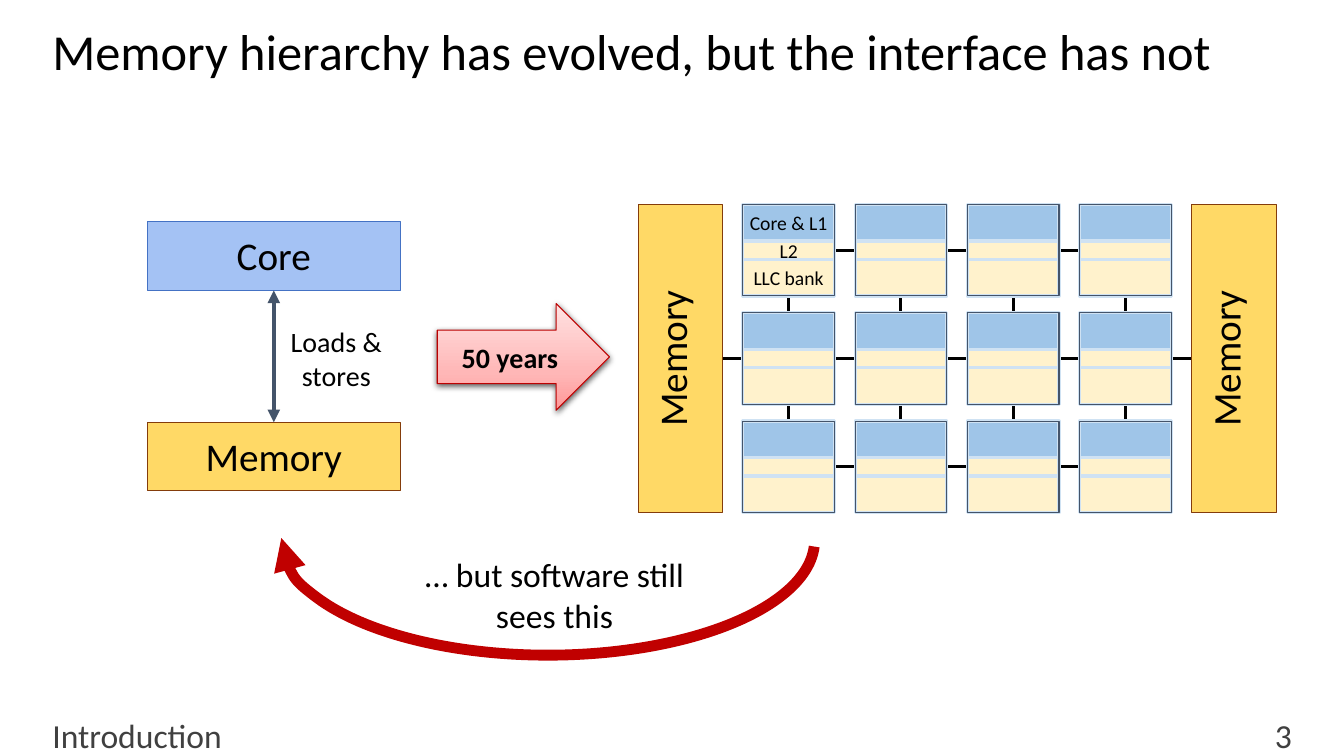
from dataclasses import dataclass

from lxml.etree import SubElement
from pptx import Presentation
from pptx.dml.color import RGBColor
from pptx.enum.shapes import MSO_CONNECTOR, MSO_SHAPE
from pptx.enum.text import MSO_ANCHOR, PP_ALIGN
from pptx.oxml.ns import qn
from pptx.util import Cm, Pt


@dataclass(frozen=True)
class Theme:
    font: str = "Calibri"
    ink: str = "000000"
    muted: str = "404040"
    slate: str = "44546A"
    core: str = "A4C2F4"
    core_edge: str = "4472C4"
    memory: str = "FFD966"
    memory_edge: str = "843C0B"
    core_band: str = "9FC5E8"
    cache_band: str = "FFF2CC"
    band_edge: str = "CFE2F3"
    arrow_edge: str = "BB0000"
    arrow_stops: tuple = ((0, "FF9797"), (35, "FFB7B7"), (100, "FFE2E2"))
    curve: str = "C00000"
    title_size: int = 36
    block_size: int = 28
    note_size: int = 24
    label_size: int = 20
    band_size: int = 14


@dataclass(frozen=True)
class Box:
    left: float
    top: float
    width: float
    height: float

    def inner(self, left, top, width, height):
        return Box(self.left + left, self.top + top, width, height)

    def lengths(self):
        return Cm(self.left), Cm(self.top), Cm(self.width), Cm(self.height)


THEME = Theme()


def write(shape, text, size, color=THEME.ink, align=PP_ALIGN.CENTER,
          anchor=MSO_ANCHOR.TOP, inset=(0.25, 0.25), bold=False):
    frame = shape.text_frame
    frame.word_wrap = True
    frame.vertical_anchor = anchor
    frame.margin_left = frame.margin_right = Cm(inset[0])
    frame.margin_top = frame.margin_bottom = Cm(inset[1])
    para = frame.paragraphs[0]
    para.alignment = align
    span = para.add_run()
    span.text = text
    span.font.name = THEME.font
    span.font.size = Pt(size)
    span.font.bold = bold
    span.font.color.rgb = RGBColor.from_string(color)
    return para


def add_label(page, box, text, size, **style):
    write(page.shapes.add_textbox(*box.lengths()), text, size, **style)


def add_block(page, box, fill, edge, weight=0.75, kind=MSO_SHAPE.RECTANGLE):
    shape = page.shapes.add_shape(kind, *box.lengths())
    shape.shadow.inherit = False
    if fill:
        shape.fill.solid()
        shape.fill.fore_color.rgb = RGBColor.from_string(fill)
    else:
        shape.fill.background()
    shape.line.color.rgb = RGBColor.from_string(edge)
    shape.line.width = Pt(weight)
    return shape


def add_line(page, start, end, color, weight):
    line = page.shapes.add_connector(
        MSO_CONNECTOR.STRAIGHT, *(Cm(value) for value in (*start, *end)))
    line.line.color.rgb = RGBColor.from_string(color)
    line.line.width = Pt(weight)
    SubElement(line.element.spPr, qn("a:effectLst"))
    return line


def add_arrowheads(shape, *ends):
    outline = shape.element.spPr.find(qn("a:ln"))
    for end in ends:
        SubElement(outline, qn(f"a:{end}"), type="triangle")


def add_title(page, box, text):
    title = page.shapes.title
    title.left, title.top, title.width, title.height = box.lengths()
    para = write(title, text, THEME.title_size, align=PP_ALIGN.LEFT, inset=(0.25, 0.13))
    para.line_spacing = 0.9


def add_footer(page, box, section, number):
    style = {"color": THEME.muted, "anchor": MSO_ANCHOR.MIDDLE, "inset": (0.25, 0.13)}
    add_label(page, box.inner(0, 0, 28.85, box.height), section,
              THEME.note_size, align=PP_ALIGN.LEFT, **style)
    add_label(page, box.inner(box.width - 2.08, 0, 2.08, box.height), number,
              THEME.note_size, align=PP_ALIGN.RIGHT, **style)


def add_simple_machine(page, box):
    height = 1.73
    core = add_block(page, box.inner(0, 0, box.width, height), THEME.core, THEME.core_edge)
    write(core, "Core", THEME.block_size)
    memory = add_block(page, box.inner(0, box.height - height, box.width, height),
                       THEME.memory, THEME.memory_edge)
    write(memory, "Memory", THEME.block_size)
    middle = box.left + box.width / 2
    link = add_line(page, (middle, box.top + box.height - height),
                    (middle, box.top + height), THEME.slate, 3)
    link.begin_connect(memory, 0)
    link.end_connect(core, 2)
    add_arrowheads(link, "headEnd", "tailEnd")
    add_label(page, box.inner(box.width - 3.23, 2.34, 3.23, 2.34),
              "Loads & stores", THEME.label_size)


def add_years_arrow(page, box):
    arrow = add_block(page, box, None, THEME.arrow_edge, kind=MSO_SHAPE.RIGHT_ARROW)
    arrow.fill.gradient()
    arrow.fill.gradient_angle = 90
    stops = arrow.element.spPr.find(qn("a:gradFill")).find(qn("a:gsLst"))
    for stop in list(stops):
        stops.remove(stop)
    for position, color in THEME.arrow_stops:
        stop = SubElement(stops, qn("a:gs"), pos=str(position * 1000))
        SubElement(stop, qn("a:srgbClr"), val=color)
    shadow = SubElement(arrow.element.spPr.find(qn("a:effectLst")), qn("a:outerShdw"),
                        blurRad=str(Pt(4.5)), dist=str(Pt(1.5)), dir="5400000",
                        rotWithShape="0")
    shade = SubElement(shadow, qn("a:srgbClr"), val=THEME.ink)
    SubElement(shade, qn("a:alpha"), val="63000")
    write(arrow, "50 years", THEME.label_size, anchor=MSO_ANCHOR.MIDDLE,
          inset=(0.25, 0.13), bold=True)


def add_tile(page, box, names):
    bands = ((0, 0.4, THEME.core_band), (0.6, 0.4, THEME.cache_band),
             (0.4, 0.2, THEME.cache_band))
    for (start, share, fill), name in zip(bands, names):
        band = add_block(page, box.inner(0, start * box.height, box.width, share * box.height),
                         fill, THEME.band_edge, 2.25)
        if name:
            write(band, name, THEME.band_size, anchor=MSO_ANCHOR.MIDDLE, inset=(0, 0))
    add_block(page, box, None, THEME.slate)


def add_multicore(page, box):
    memory_width, gap, tile, columns, rows = 2.13, 0.51, 2.31, 4, 3
    first = memory_width + gap
    column_pitch = (box.width - 2 * first - tile) / (columns - 1)
    row_pitch = (box.height - tile) / (rows - 1)
    lefts = [first + column * column_pitch for column in range(columns)]
    tops = [row * row_pitch for row in range(rows)]
    centers_x = [box.left + left + tile / 2 for left in lefts]
    centers_y = [box.top + top + tile / 2 for top in tops]

    for row, y in enumerate(centers_y):
        reach = first if row == 1 else 0
        add_line(page, (centers_x[0] - reach, y), (centers_x[-1] + reach, y), THEME.ink, 2.25)
    for x in centers_x:
        add_line(page, (x, centers_y[-1]), (x, centers_y[0]), THEME.ink, 2.25)

    for top in tops:
        for left in lefts:
            names = ("Core & L1", "LLC bank", "L2") if (left, top) == (first, 0) else ("", "", "")
            add_tile(page, box.inner(left, top, tile, tile), names)

    shift = (box.height - memory_width) / 2
    for left in (0, box.width - memory_width):
        memory = add_block(page, box.inner(left - shift, shift, box.height, memory_width),
                           THEME.memory, THEME.memory_edge)
        memory.rotation = 270
        write(memory, "Memory", THEME.block_size)


def add_return_curve(page, box):
    add_label(page, box.inner(3.1, 3, 7.57, 2.34),
              "… but software still sees this", THEME.note_size)
    curve = add_block(page, box, None, THEME.curve, 7.75, MSO_SHAPE.ARC)
    curve.adjustments[0] = 107.71
    curve.adjustments[1] = 215.19
    curve.element.spPr.find(qn("a:xfrm")).set("flipV", "1")
    add_arrowheads(curve, "headEnd")


def main():
    deck = Presentation()
    deck.slide_width, deck.slide_height = Cm(33.87), Cm(19.05)
    page = deck.slides.add_slide(deck.slide_layouts[5])
    add_title(page, Box(1.07, 0.56, 32.54, 3.45),
              "Memory hierarchy has evolved, but the interface has not")
    add_simple_machine(page, Box(3.71, 5.59, 6.38, 6.78))
    add_years_arrow(page, Box(11.02, 7.65, 4.34, 2.69))
    add_multicore(page, Box(16.08, 5.15, 16.08, 7.77))
    add_return_curve(page, Box(7.09, 10.72, 13.44, 5.79))
    add_footer(page, Box(1.07, 18.01, 31.74, 1.03), "Introduction", "3")
    deck.save("out.pptx")


if __name__ == "__main__":
    main()
